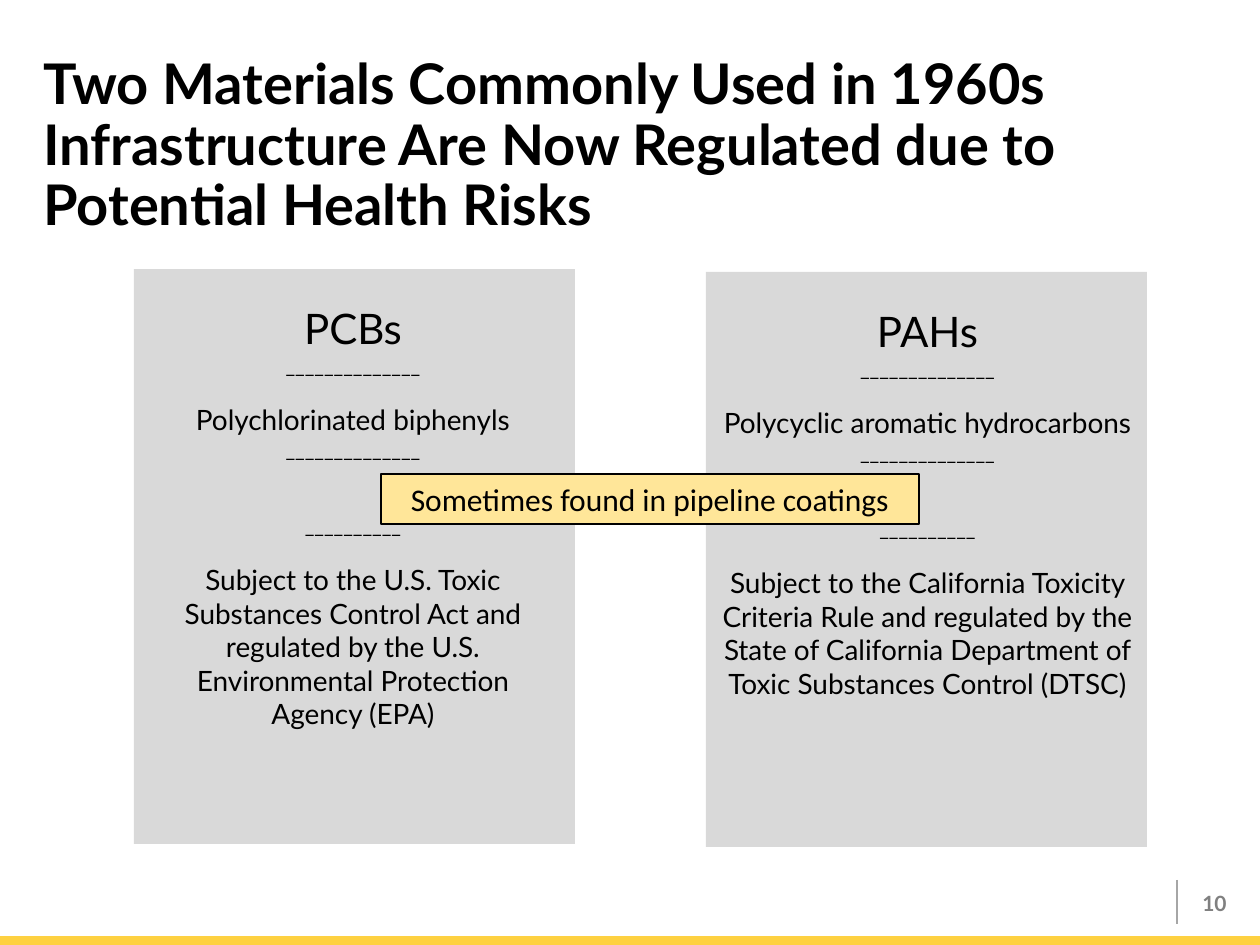
"""Build the slide comparing PCBs and PAHs, two regulated 1960s materials."""
from pptx import Presentation
from pptx.dml.color import RGBColor
from pptx.enum.shapes import MSO_CONNECTOR, MSO_SHAPE
from pptx.enum.text import MSO_ANCHOR, PP_ALIGN
from pptx.oxml.ns import qn
from pptx.util import Pt
from lxml.etree import SubElement

TITLE = ("Two Materials Commonly Used in 1960s Infrastructure Are Now "
         "Regulated due to Potential Health Risks")
SHARED_FACT = "Sometimes found in pipeline coatings"
PAGE_NUMBER = "10"
LONG_RULE, SHORT_RULE = "_" * 14, "_" * 10

MATERIALS = [
    {"left": 134, "top": 269, "text_width": 432, "short": "PCBs",
     "full": "Polychlorinated biphenyls",
     "rule": "Subject to the U.S. Toxic Substances Control Act and regulated "
             "by the U.S. Environmental Protection Agency (EPA)"},
    {"left": 706, "top": 272, "text_width": 437, "short": "PAHs",
     "full": "Polycyclic aromatic hydrocarbons",
     "rule": "Subject to the California Toxicity Criteria Rule and regulated by "
             "the State of California Department of Toxic Substances Control (DTSC)"},
]

THEME = {
    "font": "Lato", "banner_font": "Calibri",
    "ink": "000000", "muted": "808080", "divider": "A6A6A6",
    "panel": "D9D9D9", "banner": "FFE699", "footer": "FED141",
    "title": 32, "heading": 24, "banner_size": 18, "body": 16, "small": 12,
}
PX = 914400 / 126
PANEL_SIZE = (441, 575)
TEXT_OFFSET = (3, 27)
TEXT_HEIGHT = 445
SKIPPED_LINE = 14.4


def emu(*lengths):
    return [round(length * PX) for length in lengths]


def color(name):
    return RGBColor.from_string(THEME[name])


def apply(target, values):
    for name, value in values.items():
        setattr(target, name, value)


def write(box, lines, align, anchor=MSO_ANCHOR.TOP, font="font", ink="ink",
          bold=False, spacing=None):
    frame = box.text_frame
    apply(frame, {"word_wrap": True, "vertical_anchor": anchor})
    for index, (text, size, gap) in enumerate(lines):
        para = frame.add_paragraph() if index else frame.paragraphs[0]
        apply(para, {"alignment": align, "line_spacing": spacing})
        if gap:
            para.space_before = Pt(gap)
        span = para.add_run()
        span.text = text
        apply(span.font, {"name": THEME[font], "size": Pt(THEME[size]), "bold": bold})
        span.font.color.rgb = color(ink)


def add_text(page, area, lines, align, **options):
    write(page.shapes.add_textbox(*emu(*area)), lines, align, **options)


def add_block(page, area, fill, outline=None):
    block = page.shapes.add_shape(MSO_SHAPE.RECTANGLE, *emu(*area))
    block.shadow.inherit = False
    block.fill.solid()
    block.fill.fore_color.rgb = color(fill)
    if outline:
        block.line.color.rgb = color(outline)
        block.line.width = Pt(0.75)
    else:
        block.line.fill.background()
    return block


def add_material(page, material):
    left, top = material["left"], material["top"]
    add_block(page, (left, top, *PANEL_SIZE), "panel")
    lines = [
        (material["short"], "heading", 0),
        (LONG_RULE, "small", 0),
        (material["full"], "body", SKIPPED_LINE),
        (LONG_RULE, "small", 0),
        (SHORT_RULE, "small", 2 * SKIPPED_LINE),
        (material["rule"], "body", SKIPPED_LINE),
    ]
    area = (left + TEXT_OFFSET[0], top + TEXT_OFFSET[1],
            material["text_width"], TEXT_HEIGHT)
    add_text(page, area, lines, PP_ALIGN.CENTER)


def add_footer(page):
    divider = page.shapes.add_connector(MSO_CONNECTOR.STRAIGHT,
                                        *emu(1177, 880, 1177, 924))
    divider.line.color.rgb = color("divider")
    divider.line.width = Pt(1)
    SubElement(divider._element.spPr, qn("a:effectLst"))
    add_block(page, (0, 936, 1260, 9), "footer")
    add_text(page, (1168, 878, 71, 50), [(PAGE_NUMBER, "small", 0)], PP_ALIGN.RIGHT,
             anchor=MSO_ANCHOR.MIDDLE, ink="muted", bold=True)


def main():
    deck = Presentation()
    deck.slide_width, deck.slide_height = emu(1260, 945)
    page = deck.slides.add_slide(deck.slide_layouts[6])
    add_footer(page)
    add_text(page, (31, 50, 1197, 69), [(TITLE, "title", 0)], PP_ALIGN.LEFT,
             bold=True, spacing=0.9)
    for material in MATERIALS:
        add_material(page, material)
    banner = add_block(page, (381, 474, 538, 50), "banner", "ink")
    write(banner, [(SHARED_FACT, "banner_size", 0)], PP_ALIGN.CENTER,
          font="banner_font")
    deck.save("out.pptx")


if __name__ == "__main__":
    main()
